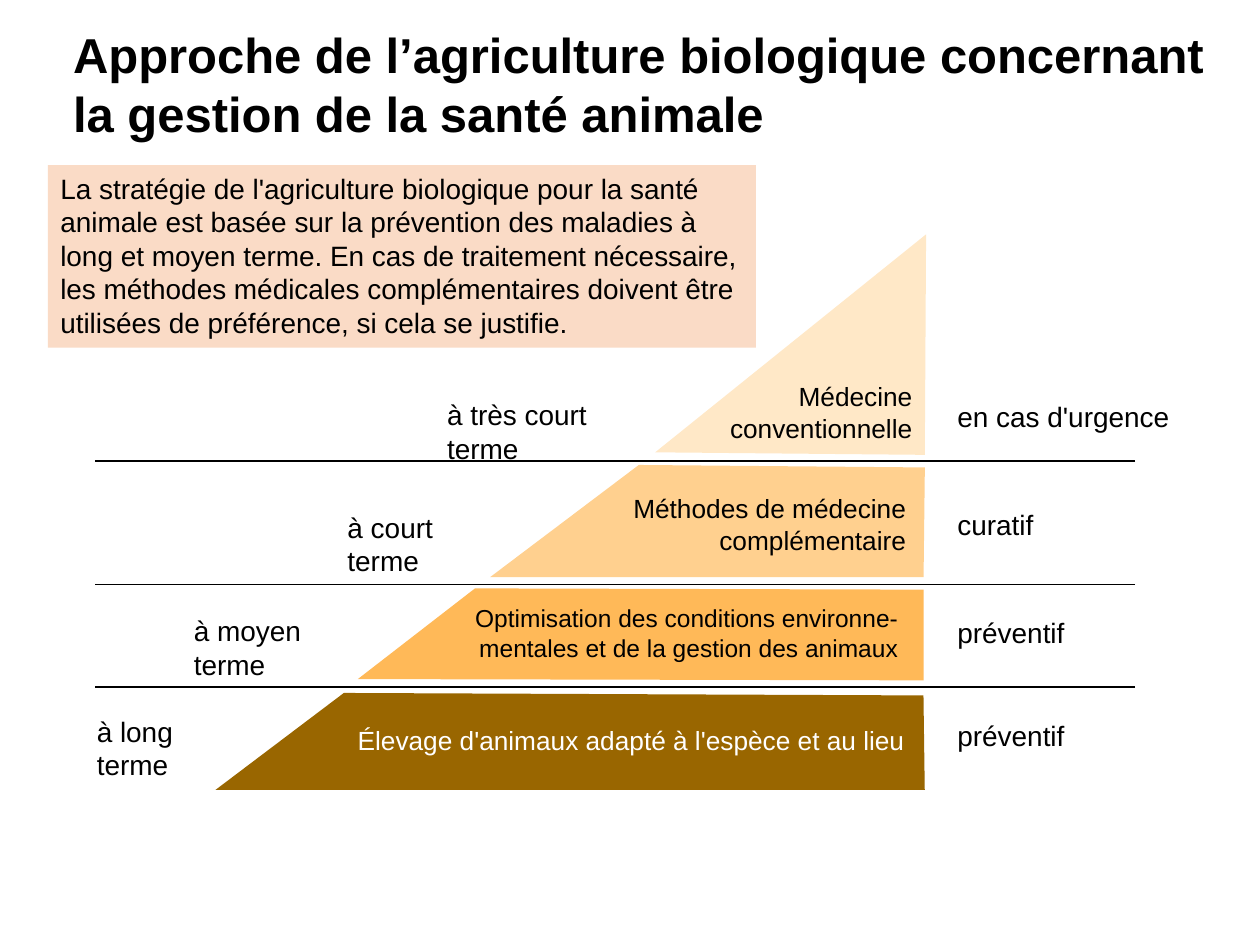
from lxml import etree
from pptx import Presentation
from pptx.dml.color import RGBColor
from pptx.enum.shapes import MSO_CONNECTOR, MSO_SHAPE
from pptx.enum.text import MSO_ANCHOR, MSO_AUTO_SIZE, PP_ALIGN
from pptx.oxml.ns import qn
from pptx.util import Inches, Pt

LEFT, RIGHT = PP_ALIGN.LEFT, PP_ALIGN.RIGHT
TOP, MIDDLE = MSO_ANCHOR.TOP, MSO_ANCHOR.MIDDLE
FONT = "Arial"
BLACK, WHITE = "000000", "FFFFFF"

# Content
TITLE = ("Approche de l’agriculture biologique concernant "
         "la gestion de la santé animale")
STRATEGY = ("La stratégie de l'agriculture biologique pour la santé animale est "
            "basée sur la prévention des maladies à long et moyen terme. En cas de "
            "traitement nécessaire, les méthodes médicales complémentaires doivent "
            "être utilisées de préférence, si cela se justifie.")

# Each level, top to bottom; boxes are left, top, width, height in inches
LEVELS = [
    dict(outline=[(5.2, 3.59), (7.35, 1.86), (7.34, 3.61)], fill="FFE8C7",
         method="Médecine conventionnelle", method_box=(5.52, 2.97, 1.82, 0.61),
         size=15, align=RIGHT, color=BLACK,
         term="à très court terme", term_box=(3.45, 3.11, 1.74, 0.3),
         role="en cas d'urgence", role_top=3.12),
    dict(outline=[(5.07, 3.69), (7.34, 3.71), (7.33, 4.58), (3.89, 4.58)],
         fill="FFD08F",
         method="Méthodes de médecine complémentaire",
         method_box=(4.57, 3.86, 2.72, 0.61),
         size=15, align=RIGHT, color=BLACK,
         term="à court terme", term_box=(2.66, 4, 1.23, 0.3),
         role="curatif", role_top=3.98),
    dict(outline=[(3.77, 4.67), (7.33, 4.68), (7.33, 5.4), (2.84, 5.39)],
         fill="FFB958",
         method="Optimisation des conditions environne-\v"
                "mentales et de la gestion des animaux",
         method_box=(2.76, 4.74, 4.47, 0.57),
         size=14, align=RIGHT, color=BLACK,
         term="à moyen terme", term_box=(1.44, 4.82, 1.54, 0.3),
         role="préventif", role_top=4.84),
    dict(outline=[(2.73, 5.5), (7.33, 5.52), (7.34, 6.27), (1.71, 6.27)],
         fill="996600",
         method="Élevage d'animaux adapté à l'espèce et au lieu",
         method_box=(2.74, 5.7, 4.68, 0.35),
         size=15, align=LEFT, color=WHITE,
         term="à long terme", term_box=(0.67, 5.62, 1.16, 0.3),
         role="préventif", role_top=5.65),
]
DIVIDERS = [3.66, 4.64, 5.45]
DIVIDER_LEFT, DIVIDER_RIGHT = 0.75, 9.01
ROLE_LEFT, ROLE_WIDTH, ROLE_HEIGHT = 7.5, 2.11, 0.3


def rgb(color):
    return RGBColor.from_string(color)


def paint(shape, color):
    shape.fill.solid()
    shape.fill.fore_color.rgb = rgb(color)
    shape.line.fill.background()
    shape.shadow.inherit = False


def write(shape, text, size, color=BLACK, align=LEFT, anchor=TOP, bold=False):
    frame = shape.text_frame
    frame.text = text
    frame.word_wrap = True
    frame.auto_size = MSO_AUTO_SIZE.NONE
    frame.vertical_anchor = anchor
    paragraph = frame.paragraphs[0]
    paragraph.alignment = align
    for run in paragraph.runs:
        run.font.name = FONT
        run.font.size = Pt(size)
        run.font.bold = bold
        run.font.color.rgb = rgb(color)


def add_label(slide, box, text, size, **style):
    write(slide.shapes.add_textbox(*map(Inches, box)), text, size, **style)


def add_step(slide, outline, color):
    points = [(Inches(x), Inches(y)) for x, y in outline]
    builder = slide.shapes.build_freeform(*points[0])
    builder.add_line_segments(points[1:], close=True)
    paint(builder.convert_to_shape(), color)


def add_divider(slide, y):
    line = slide.shapes.add_connector(
        MSO_CONNECTOR.STRAIGHT, Inches(DIVIDER_RIGHT), Inches(y),
        Inches(DIVIDER_LEFT), Inches(y))
    line.line.color.rgb = rgb(BLACK)
    line.line.width = Pt(1)
    etree.SubElement(line._element.spPr, qn("a:effectLst"))


def main():
    deck = Presentation()
    deck.slide_width, deck.slide_height = Inches(10), Inches(7.5)
    slide = deck.slides.add_slide(deck.slide_layouts[5])

    # Title
    title = slide.shapes.title
    title.left, title.top = Inches(0.58), Inches(0.31)
    title.width, title.height = Inches(9.18), Inches(0.76)
    write(title, TITLE, 28, anchor=MIDDLE, bold=True)
    frame = title.text_frame
    frame.margin_left = frame.margin_top = 0
    frame.margin_right, frame.margin_bottom = Inches(0.1), Inches(0.05)

    # Pyramid steps and dividers
    for level in LEVELS:
        add_step(slide, level["outline"], level["fill"])
    for y in DIVIDERS:
        add_divider(slide, y)

    # Time frame, method and role of each level
    for level in LEVELS:
        add_label(slide, level["term_box"], level["term"], 16)
        add_label(slide, (ROLE_LEFT, level["role_top"], ROLE_WIDTH, ROLE_HEIGHT),
                  level["role"], 16)
        add_label(slide, level["method_box"], level["method"], level["size"],
                  color=level["color"], align=level["align"])

    # Strategy box
    strategy = slide.shapes.add_shape(
        MSO_SHAPE.RECTANGLE, *map(Inches, (0.38, 1.31, 5.62, 1.45)))
    paint(strategy, "FADBC6")
    write(strategy, STRATEGY, 16)

    deck.save("out.pptx")


if __name__ == "__main__":
    main()
